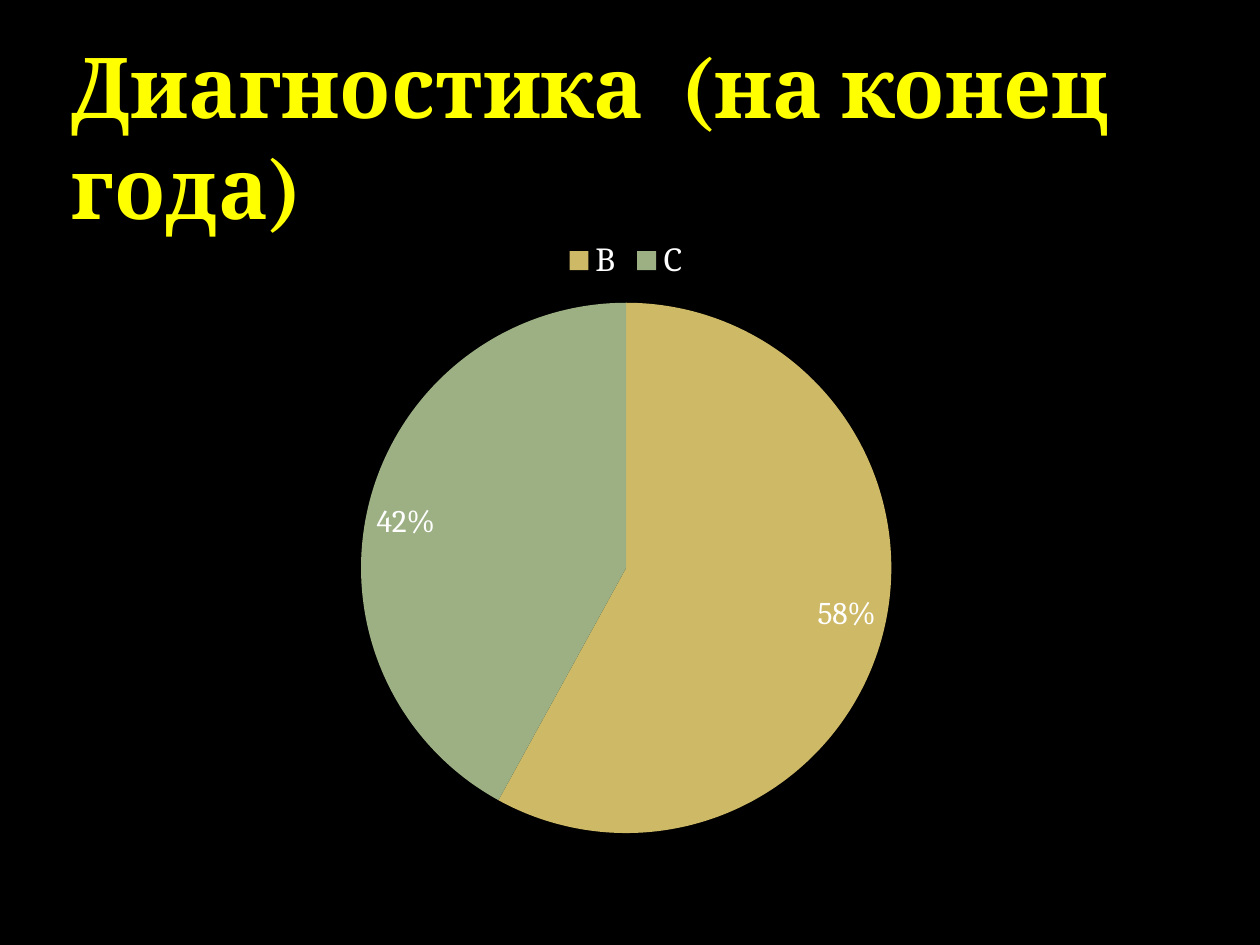
from pptx import Presentation
from pptx import util as u
from pptx.chart.data import CategoryChartData
from pptx.dml.color import RGBColor
from pptx.enum import chart as ch, text

HUES = {"back": "000000", "title": "FFFF00", "text": "FFFFFF",
        "gold": "CEB966", "green": "9CB084"}
WIDE, HIGH = 10, 7.5


class Deck:
    """Holds the style and the current slide; lengths are shares of its size."""

    face = "Cambria"

    def __init__(self):
        self.show = Presentation()
        self.show.slide_width = u.Inches(WIDE)
        self.show.slide_height = u.Inches(HIGH)
        self.slide = self.show.slides.add_slide(self.show.slide_layouts[6])
        self.paint(self.slide.background.fill, "back")

    def paint(self, fill, hue):
        fill.solid()
        fill.fore_color.rgb = RGBColor.from_string(HUES[hue])

    def style(self, font, size, hue, bold=False):
        font.name, font.size, font.bold = self.face, u.Pt(size), bold
        font.color.rgb = RGBColor.from_string(HUES[hue])

    def box(self, left, top, width, height):
        return (u.Inches(left * WIDE), u.Inches(top * HIGH),
                u.Inches(width * WIDE), u.Inches(height * HIGH))

    def title(self, words, *area):
        frame = self.slide.shapes.add_textbox(*self.box(*area)).text_frame
        frame.word_wrap = True
        frame.auto_size = text.MSO_AUTO_SIZE.SHAPE_TO_FIT_TEXT
        frame.text = words
        self.style(frame.paragraphs[0].runs[0].font, 48, "title", bold=True)

    def pie(self, parts, *area):
        """Draw a pie from (name, value, hue) parts."""
        data = CategoryChartData()
        data.categories = [name for name, _, _ in parts]
        data.add_series("Series 1", [value for _, value, _ in parts])
        chart = self.slide.shapes.add_chart(
            ch.XL_CHART_TYPE.PIE, *self.box(*area), data).chart
        self.style(chart.font, 18, "text")
        chart.has_title = False
        chart.has_legend = True
        chart.legend.position = ch.XL_LEGEND_POSITION.TOP
        chart.legend.include_in_layout = False
        plot = chart.plots[0]
        plot.vary_by_categories = True
        for i, (_, _, hue) in enumerate(parts):
            self.paint(plot.series[0].points[i].format.fill, hue)
        plot.has_data_labels = True
        labels = plot.data_labels
        labels.show_percentage, labels.show_value = True, False
        labels.number_format, labels.number_format_is_linked = "0%", False
        labels.position = ch.XL_LABEL_POSITION.INSIDE_END
        self.style(labels.font, 18, "text")


def main():
    deck = Deck()
    deck.title("Диагностика  (на конец года)", 0.047, 0.03, 0.906, 0.12)
    deck.pie([("В", 58, "gold"), ("С", 42, "green")], 0.047, 0.24, 0.9, 0.66)
    deck.show.save("out.pptx")


if __name__ == "__main__":
    main()
